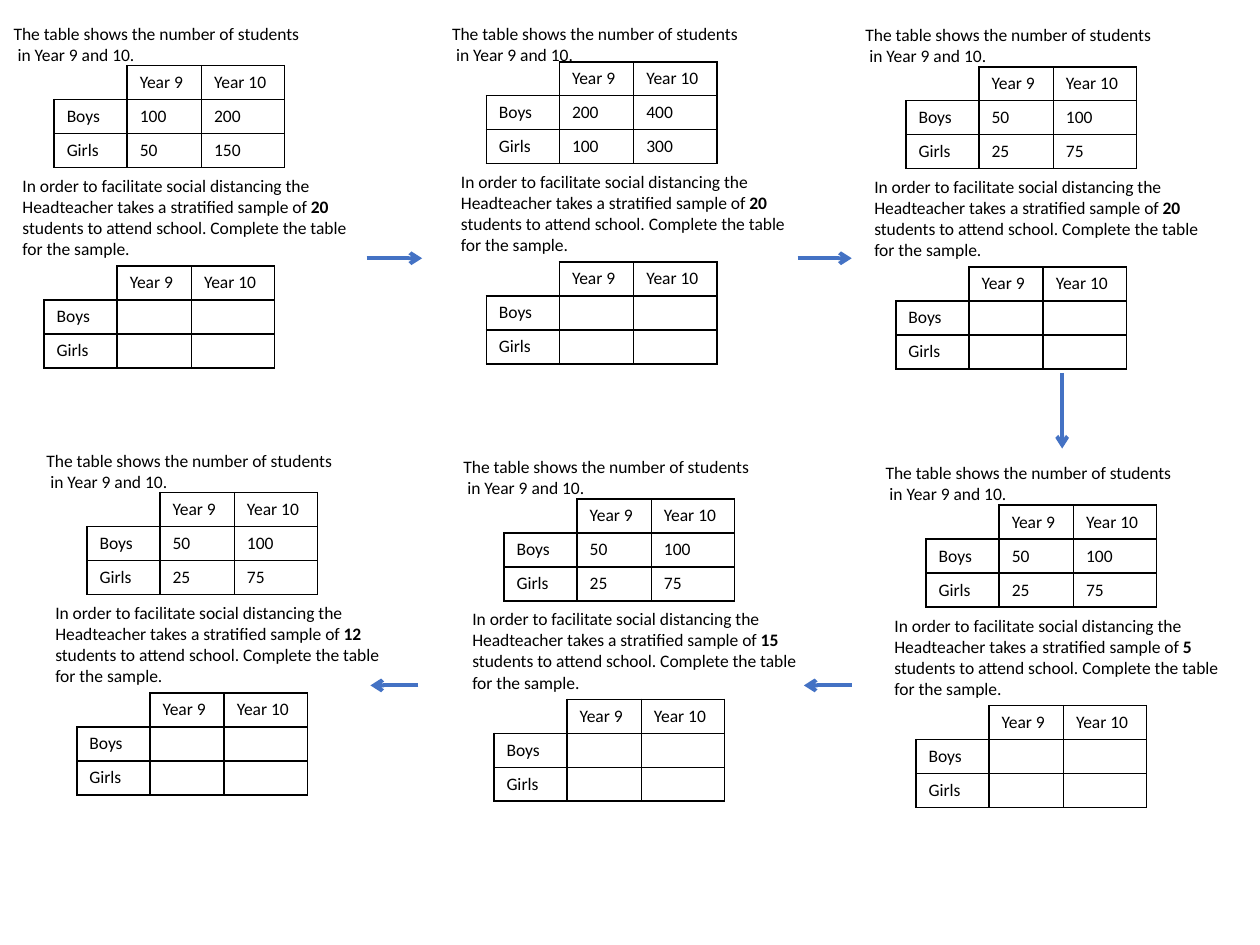
from pptx import Presentation
from pptx.dml.color import RGBColor
from pptx.enum.shapes import MSO_CONNECTOR
from pptx.enum.text import MSO_AUTO_SIZE
from pptx.oxml.xmlchemy import OxmlElement
from pptx.util import Inches, Pt

BLACK = RGBColor(0x00, 0x00, 0x00)
BLUE = RGBColor(0x44, 0x72, 0xC4)
STRAIGHT = MSO_CONNECTOR.STRAIGHT
FIT = MSO_AUTO_SIZE.SHAPE_TO_FIT_TEXT
FONT = "Calibri"
SIZE = Pt(10)
COLS = (0.58, 0.59, 0.66)
ROW = 0.27
BLANK = ((None, None), (None, None))
SMALL = ((50, 100), (25, 75))

# left, top, student numbers, sample size, offsets that differ from the rest
PANELS = (
    (0.01, 0.13, ((100, 200), (50, 150)), 20, {}),
    (3.49, 0.13, ((200, 400), (100, 300)), 20,
     {"given_x": 0.37, "sample_x": 0.37, "lift": 0.03}),
    (6.77, 0.14, SMALL, 20, {}),
    (6.93, 3.62, SMALL, 5, {}),
    (3.58, 3.57, SMALL, 15, {}),
    (0.27, 3.52, SMALL, 12, {}),
)
ARROWS = (
    (2.91, 2.05, 3.35, 2.05),
    (6.33, 2.05, 6.76, 2.05),
    (8.43, 2.96, 8.43, 3.56),
    (6.76, 5.44, 6.38, 5.44),
    (3.32, 5.44, 2.94, 5.44),
)


def style(run, bold=None):
    font = run.font
    font.name, font.size, font.bold = FONT, SIZE, bold
    font.color.rgb = BLACK


def add_text(slide, left, top, width, height, paras):
    """Each paragraph is a list of (text, bold) runs."""
    box = slide.shapes.add_textbox(
        Inches(left), Inches(top), Inches(width), Inches(height))
    frame = box.text_frame
    frame.word_wrap = True
    frame.auto_size = FIT
    for i, parts in enumerate(paras):
        para = frame.paragraphs[0] if i == 0 else frame.add_paragraph()
        for text, bold in parts:
            run = para.add_run()
            run.text = text
            style(run, bold)


def add_border(cell, side, shown):
    line = OxmlElement(f"a:ln{side}")
    line.set("w", str(Pt(1)))
    if shown:
        fill = OxmlElement("a:solidFill")
        color = OxmlElement("a:srgbClr")
        color.set("val", str(BLACK))
        fill.append(color)
    else:
        fill = OxmlElement("a:noFill")
    line.append(fill)
    cell._tc.get_or_add_tcPr().append(line)


def fill_cell(cell, value, corner):
    for side in "LRTB":
        add_border(cell, side, not corner or side in "RB")
    cell.fill.background()
    para = cell.text_frame.paragraphs[0]
    if value is None:
        # An empty cell needs its size on the paragraph end to stay low.
        end = OxmlElement("a:endParaRPr")
        end.set("sz", str(int(SIZE.pt * 100)))
        para._p.append(end)
    else:
        para.text = str(value)
        style(para.runs[0])


def add_grid(slide, left, top, counts):
    rows = ((None, "Year 9", "Year 10"),
            ("Boys", *counts[0]), ("Girls", *counts[1]))
    table = slide.shapes.add_table(
        len(rows), len(COLS), Inches(left), Inches(top),
        Inches(sum(COLS)), Inches(ROW * len(rows))).table
    table.first_row = table.horz_banding = False
    for col, width in zip(table.columns, COLS):
        col.width = Inches(width)
    for r, row in enumerate(rows):
        table.rows[r].height = Inches(ROW)
        for c, value in enumerate(row):
            fill_cell(table.cell(r, c), value, r == c == 0)


def add_panel(slide, left, top, counts, sample,
              given_x=0.42, sample_x=0.34, lift=0):
    add_text(slide, left, top, 2.57, 0.44, [
        [("The table shows the number of students", None)],
        [(" in Year 9 and 10.", None)]])
    add_grid(slide, left + given_x, top + 0.39 - lift, counts)
    add_text(slide, left + 0.07, top + 1.21 - lift, 2.91, 0.77, [[
        ("In order to facilitate social distancing the Headteacher "
         "takes a stratified sample of ", None),
        (str(sample), True),
        (" students to attend school. Complete the table for the sample.",
         None)]])
    add_grid(slide, left + sample_x, top + 1.98 - lift, BLANK)


def add_arrow(slide, *ends):
    arrow = slide.shapes.add_connector(STRAIGHT, *map(Inches, ends))
    arrow.line.color.rgb = BLUE
    arrow.line.width = Pt(2.25)
    tip = OxmlElement("a:tailEnd")
    tip.set("type", "arrow")
    arrow.line._get_or_add_ln().append(tip)
    arrow._element.spPr.append(OxmlElement("a:effectLst"))


def main():
    deck = Presentation()
    deck.slide_width, deck.slide_height = Inches(10), Inches(7.5)
    slide = deck.slides.add_slide(deck.slide_layouts[6])
    for left, top, counts, sample, shifts in PANELS:
        add_panel(slide, left, top, counts, sample, **shifts)
    for ends in ARROWS:
        add_arrow(slide, *ends)
    deck.save("out.pptx")


if __name__ == "__main__":
    main()
